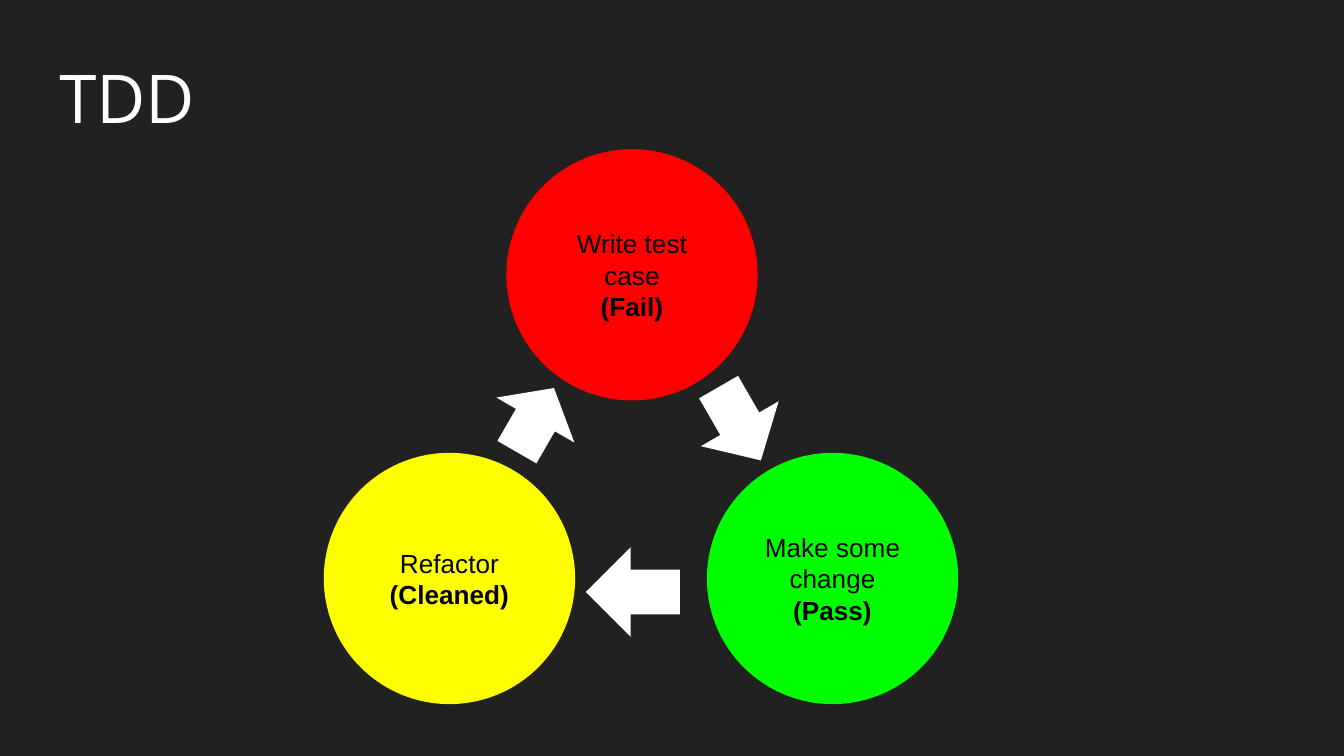
import pptx
import pptx.util
import pptx.dml.color
import pptx.enum.shapes
import pptx.enum.text

Cm = pptx.util.Cm
Pt = pptx.util.Pt
SHAPE = pptx.enum.shapes.MSO_SHAPE
ALIGN = pptx.enum.text.PP_ALIGN
ANCHOR = pptx.enum.text.MSO_ANCHOR

# Name, result, colour, left and top within the cycle
STEPS = [
    ("Write test case", "(Fail)", "FF0000", 3.45, 0),
    ("Make some change", "(Pass)", "00FF00", 7.24, 5.74),
    ("Refactor", "(Cleaned)", "FFFF00", 0, 5.74),
]
# Left, top, length and angle of each arrow within the cycle
ARROWS = [
    (7.06, 4.34, 1.6, 60),
    (4.95, 7.52, 1.78, 180),
    (3.3, 4.27, 1.4, 300),
]
DISC = 4.75
WIDE = 1.7


def color(code):
    return pptx.dml.color.RGBColor.from_string(code)


def style(font, face, size, code):
    font.name = face
    font.size = Pt(size)
    font.color.rgb = color(code)


def inset(frame):
    frame.margin_left = frame.margin_right = Cm(0.25)
    frame.margin_top = frame.margin_bottom = Cm(0.25)
    frame.word_wrap = True


def add_shape(slide, kind, left, top, width, height, code):
    shape = slide.shapes.add_shape(
        kind, Cm(left), Cm(top), Cm(width), Cm(height))
    shape.shadow.inherit = False
    shape.fill.solid()
    shape.fill.fore_color.rgb = color(code)
    shape.line.fill.background()
    return shape


def add_title(slide, text, left, top, width, height):
    title = slide.shapes.title
    title.left, title.top = Cm(left), Cm(top)
    title.width, title.height = Cm(width), Cm(height)
    frame = title.text_frame
    frame.text = text
    inset(frame)
    frame.auto_size = pptx.enum.text.MSO_AUTO_SIZE.NONE
    frame.vertical_anchor = ANCHOR.TOP
    line = frame.paragraphs[0]
    line.alignment = ALIGN.LEFT
    style(line.font, "Open Sans", 36, "FFFFFF")


def add_cycle(slide, left, top):
    # Discs with the steps
    for name, result, code, x, y in STEPS:
        disc = add_shape(slide, SHAPE.OVAL, left + x, top + y,
                         DISC, DISC, code)
        frame = disc.text_frame
        inset(frame)
        frame.vertical_anchor = ANCHOR.MIDDLE
        frame.text = f"{name}\n{result}"
        for line in frame.paragraphs:
            line.alignment = ALIGN.CENTER
            style(line.font, "Arial", 14, "000000")
        frame.paragraphs[1].font.bold = True

    # Arrows from step to step
    for x, y, length, angle in ARROWS:
        arrow = add_shape(slide, SHAPE.RIGHT_ARROW, left + x, top + y,
                          length, WIDE, "FFFFFF")
        arrow.rotation = angle


def main():
    deck = pptx.Presentation()
    deck.slide_width, deck.slide_height = Cm(25.4), Cm(14.29)
    slide = deck.slides.add_slide(deck.slide_layouts[5])
    slide.background.fill.solid()
    slide.background.fill.fore_color.rgb = color("212121")
    add_title(slide, "TDD", 0.87, 0.81, 23.67, 1.6)
    add_cycle(slide, 6.12, 2.82)
    deck.save("out.pptx")


if __name__ == "__main__":
    main()
